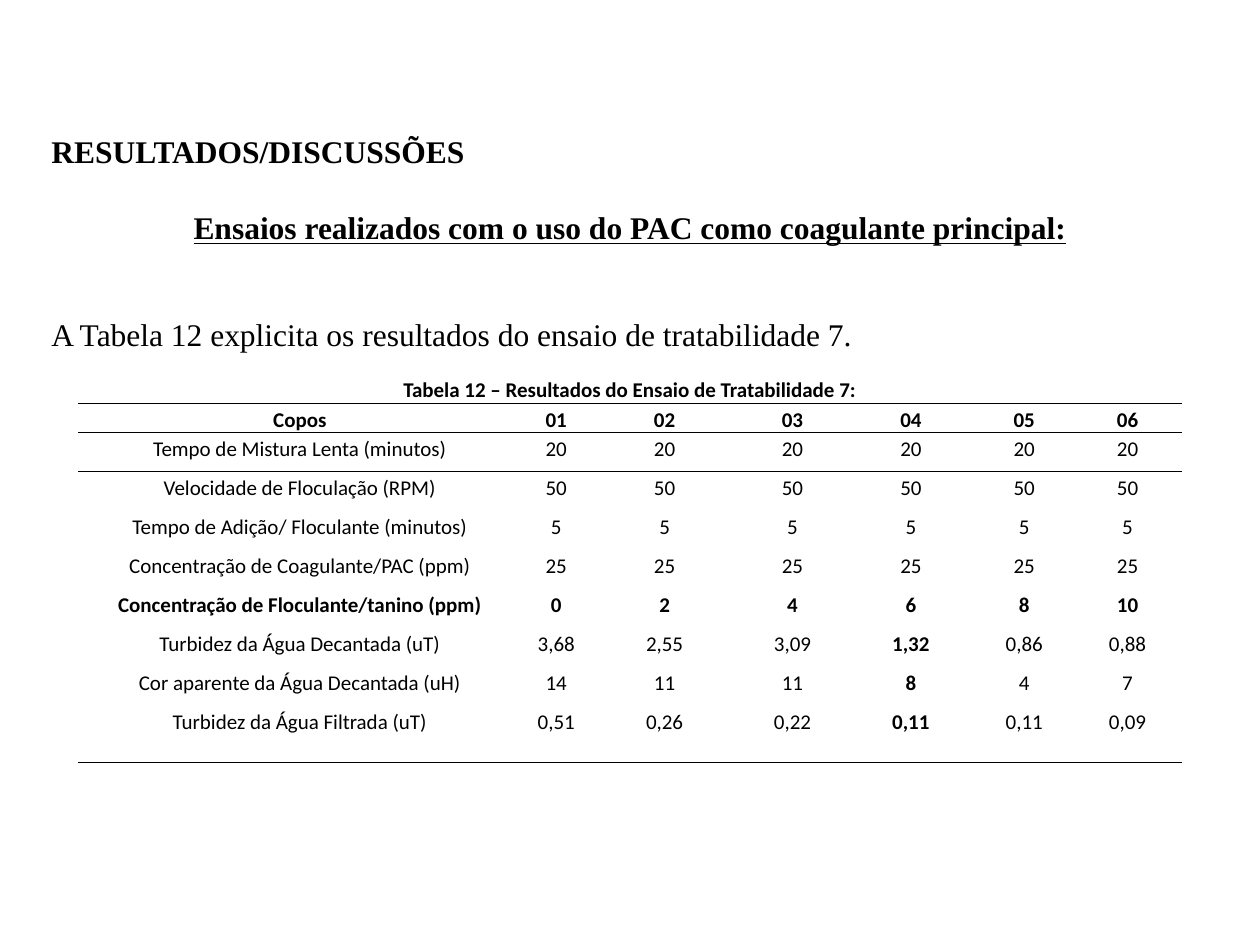
from lxml.etree import SubElement
from pptx import Presentation
from pptx.dml.color import RGBColor
from pptx.enum.text import PP_ALIGN as Align
from pptx.oxml.ns import qn
from pptx.util import Inches, Pt

BLACK = "000000"
SERIF, SANS = "Times New Roman", "Calibri"
PLAIN_STYLE = "{2D5ABB26-0587-4C30-8999-92F81FD0307C}"

# text, space before, alignment, font settings
INTRO = [
    ("RESULTADOS/DISCUSSÕES", 0, Align.JUSTIFY, {"bold": True}),
    ("Ensaios realizados com o uso do PAC como coagulante principal:", 22,
     Align.CENTER, {"bold": True, "underline": True}),
    ("A Tabela 12 explicita os resultados do ensaio de tratabilidade 7.", 39,
     Align.LEFT, {"bold": False}),
]

CAPTION = "Tabela 12 – Resultados do Ensaio de Tratabilidade 7:"
ROWS = [
    [CAPTION],
    ["Copos", "01", "02", "03", "04", "05", "06"],
    ["Tempo de Mistura Lenta (minutos)"] + ["20"] * 6,
    ["Velocidade de Floculação (RPM)"] + ["50"] * 6,
    ["Tempo de Adição/ Floculante (minutos)"] + ["5"] * 6,
    ["Concentração de Coagulante/PAC (ppm)"] + ["25"] * 6,
    ["Concentração de Floculante/tanino (ppm)", "0", "2", "4", "6", "8", "10"],
    ["Turbidez da Água Decantada (uT)", "3,68", "2,55", "3,09", "1,32", "0,86", "0,88"],
    ["Cor aparente da Água Decantada (uH)", "14", "11", "11", "8", "4", "7"],
    ["Turbidez da Água Filtrada (uT)", "0,51", "0,26", "0,22", "0,11", "0,11", "0,09"],
    [],
]
WIDTHS = [3.52, 0.55, 1.17, 0.86, 1.02, 0.78, 0.86]
HEIGHTS = [0.2, 0.22] + [0.31] * 7 + [0.23, 0.22]
BOLD_ROWS = {0, 1, 6}
BOLD_CELLS = {(row, 4) for row in (7, 8, 9)}
RULES = {0: ["lnB"], 1: ["lnT", "lnB"], 2: ["lnT"], 10: ["lnB"]}


def color(hex_code):
    return RGBColor.from_string(hex_code)


def add_run(para, text, **style):
    run = para.add_run()
    run.text = text
    run.font.color.rgb = color(BLACK)
    for key, value in style.items():
        setattr(run.font, key, value)


def add_intro(slide):
    box = slide.shapes.add_textbox(Inches(0.31), Inches(1), Inches(9.38), Inches(1.85))
    frame = box.text_frame
    frame.word_wrap = True
    for i, (text, gap, align, style) in enumerate(INTRO):
        para = frame.add_paragraph() if i else frame.paragraphs[0]
        para.alignment = align
        if gap:
            para.space_before = Pt(gap)
        add_run(para, text, name=SERIF, size=Pt(18), **style)


def add_rule(cell, side):
    line = SubElement(cell._tc.get_or_add_tcPr(), qn(f"a:{side}"), w=str(Pt(1)))
    fill = SubElement(line, qn("a:solidFill"))
    SubElement(fill, qn("a:srgbClr"), val=BLACK)


def fill_cell(cell, text, bold):
    cell.fill.background()
    cell.margin_left = cell.margin_right = Inches(0.05)
    cell.margin_top = cell.margin_bottom = 0
    para = cell.text_frame.paragraphs[0]
    para.alignment = Align.CENTER
    para.line_spacing = 1.15
    para.space_after = Pt(10)
    if text:
        add_run(para, text, name=SANS, size=Pt(12), bold=bold)
    else:
        SubElement(para._p, qn("a:endParaRPr"), sz="1000")


def add_results(slide):
    frame = slide.shapes.add_table(len(ROWS), len(WIDTHS), Inches(0.62), Inches(2.97),
                                   Inches(sum(WIDTHS)), Inches(sum(HEIGHTS)))
    table = frame.table
    table.first_row = table.horz_banding = False
    table._tbl.tblPr.find(qn("a:tableStyleId")).text = PLAIN_STYLE
    for col, width in zip(table.columns, WIDTHS):
        col.width = Inches(width)
    for r, (values, height) in enumerate(zip(ROWS, HEIGHTS)):
        table.rows[r].height = Inches(height)
        for c in range(len(WIDTHS)):
            cell = table.cell(r, c)
            for side in RULES.get(r, []):
                add_rule(cell, side)
            text = values[c] if c < len(values) else ""
            fill_cell(cell, text, r in BOLD_ROWS or (r, c) in BOLD_CELLS)
    table.cell(0, 0).merge(table.cell(0, len(WIDTHS) - 1))


def main():
    deck = Presentation()
    deck.slide_width, deck.slide_height = Inches(10), Inches(7.5)
    slide = deck.slides.add_slide(deck.slide_layouts[6])
    add_intro(slide)
    add_results(slide)
    deck.save("out.pptx")


if __name__ == "__main__":
    main()
